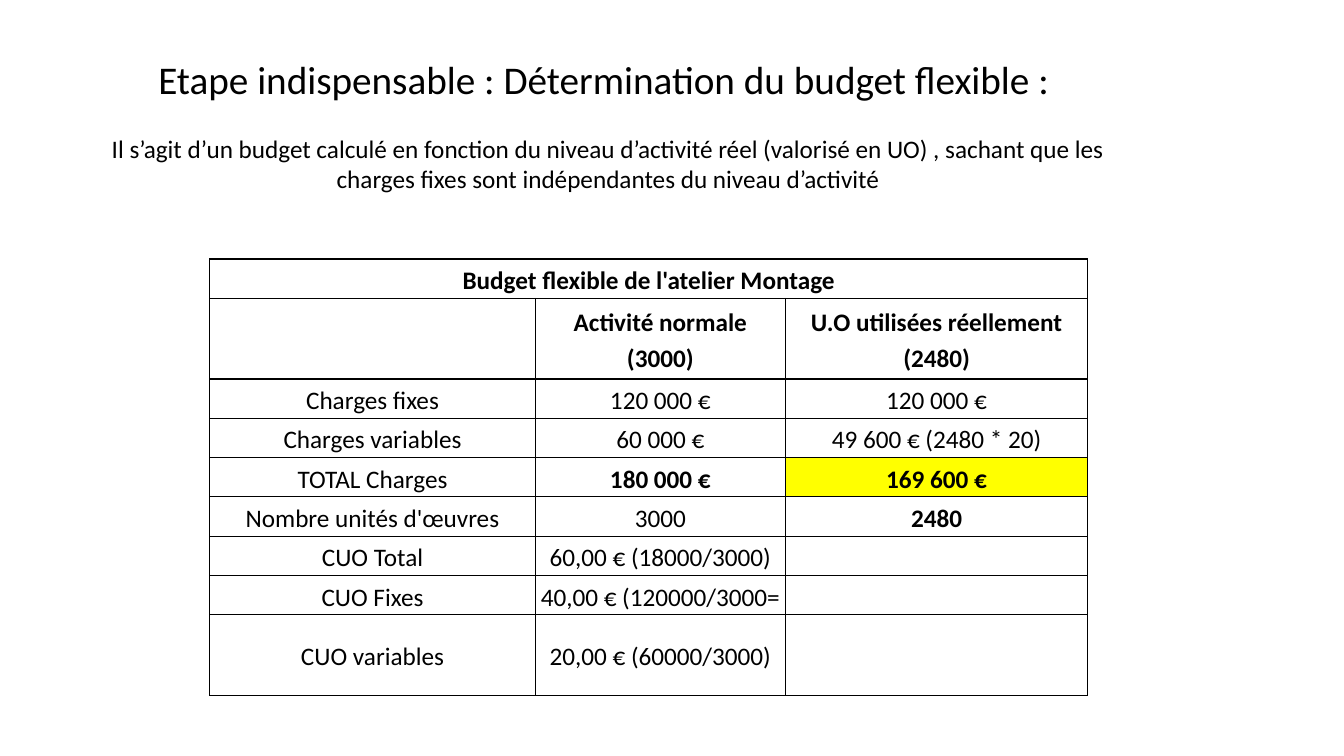
from lxml.etree import SubElement
from pptx import Presentation
from pptx.dml.color import RGBColor
from pptx.enum.text import MSO_ANCHOR, MSO_AUTO_SIZE, PP_ALIGN
from pptx.oxml.ns import qn
from pptx.util import Pt

SCALE = 9144
BLACK = "000000"
YELLOW = "FFFF00"
TITLE = "Etape indispensable : Détermination du budget flexible : "
INTRO = (
    "Il s’agit d’un budget calculé en fonction du niveau d’activité réel "
    "(valorisé en UO) , sachant que les charges fixes sont indépendantes "
    "du niveau d’activité"
)
COLS = [323, 248, 300]
ROWS = [39, 80] + [39] * 6 + [80]
BUDGET = [
    ["Budget flexible de l'atelier Montage", "", ""],
    ["", "Activité normale (3000)", "U.O utilisées réellement (2480)"],
    ["Charges fixes", "120 000 €", "120 000 €"],
    ["Charges variables", "60 000 €", "49 600 € (2480 * 20)"],
    ["TOTAL Charges", "180 000 €", "169 600 €"],
    ["Nombre unités d'œuvres", "3000", "2480"],
    ["CUO Total", "60,00 € (18000/3000)", ""],
    ["CUO Fixes", "40,00 € (120000/3000=", ""],
    ["CUO variables", "20,00 € (60000/3000)", ""],
]
BOLD = {(0, 0), (1, 1), (1, 2), (4, 1), (4, 2), (5, 2)}
TOTAL = (4, 2)


def px(*vals):
    """Turn px lengths into EMU."""
    return [val * SCALE for val in vals]


def color(code):
    """Turn a hex string into a colour."""
    return RGBColor.from_string(code)


def style(item, form):
    """Set each attribute named in a dict."""
    for name, val in form.items():
        setattr(item, name, val)


def write(para, text, size, bold=False, **form):
    """Fill one centred paragraph with a styled run."""
    style(para, {"alignment": PP_ALIGN.CENTER, **form})
    style(para.font, {"size": Pt(size), "name": "Calibri"})
    if text:
        run = para.add_run()
        run.text = text
        style(run.font, {"size": Pt(size), "name": "Calibri", "bold": bold})
        run.font.color.rgb = color(BLACK)


def border(cell):
    """Draw a thin black line on all four sides of a cell."""
    props = cell._tc.get_or_add_tcPr()
    for side in ("a:lnL", "a:lnR", "a:lnT", "a:lnB"):
        line = SubElement(props, qn(side), w=str(Pt(1)))
        fill = SubElement(line, qn("a:solidFill"))
        SubElement(fill, qn("a:srgbClr"), val=BLACK)


def header(slide):
    """Add the title and the introduction below it."""
    frame = slide.shapes.add_textbox(*px(69, 50, 1068, 148)).text_frame
    style(frame, {"word_wrap": True, "auto_size": MSO_AUTO_SIZE.NONE})
    write(frame.paragraphs[0], TITLE, 28)
    write(frame.add_paragraph(), INTRO, 18, space_before=Pt(22))


def budget(slide):
    """Add the flexible budget table."""
    box = px(208, 257, sum(COLS), sum(ROWS))
    table = slide.shapes.add_table(len(ROWS), len(COLS), *box).table
    style(table, {"first_row": False, "horz_banding": False})
    for col, width in zip(table.columns, px(*COLS)):
        col.width = width
    for row, height in zip(table.rows, px(*ROWS)):
        row.height = height
    side = px(5)[0]
    form = {
        "vertical_anchor": MSO_ANCHOR.MIDDLE,
        "margin_left": side,
        "margin_right": side,
        "margin_top": 0,
        "margin_bottom": 0,
    }
    for r, texts in enumerate(BUDGET):
        for c, text in enumerate(texts):
            cell = table.cell(r, c)
            style(cell, form)
            border(cell)
            if (r, c) == TOTAL:
                cell.fill.solid()
                cell.fill.fore_color.rgb = color(YELLOW)
            else:
                cell.fill.background()
            para = cell.text_frame.paragraphs[0]
            write(para, text, 18, (r, c) in BOLD, line_spacing=1.15)
    table.cell(0, 0).merge(table.cell(0, len(COLS) - 1))


def main():
    """Build and save the slide."""
    deck = Presentation()
    width, height = px(1333, 750)
    style(deck, {"slide_width": width, "slide_height": height})
    slide = deck.slides.add_slide(deck.slide_layouts[6])
    header(slide)
    budget(slide)
    deck.save("out.pptx")


if __name__ == "__main__":
    main()
